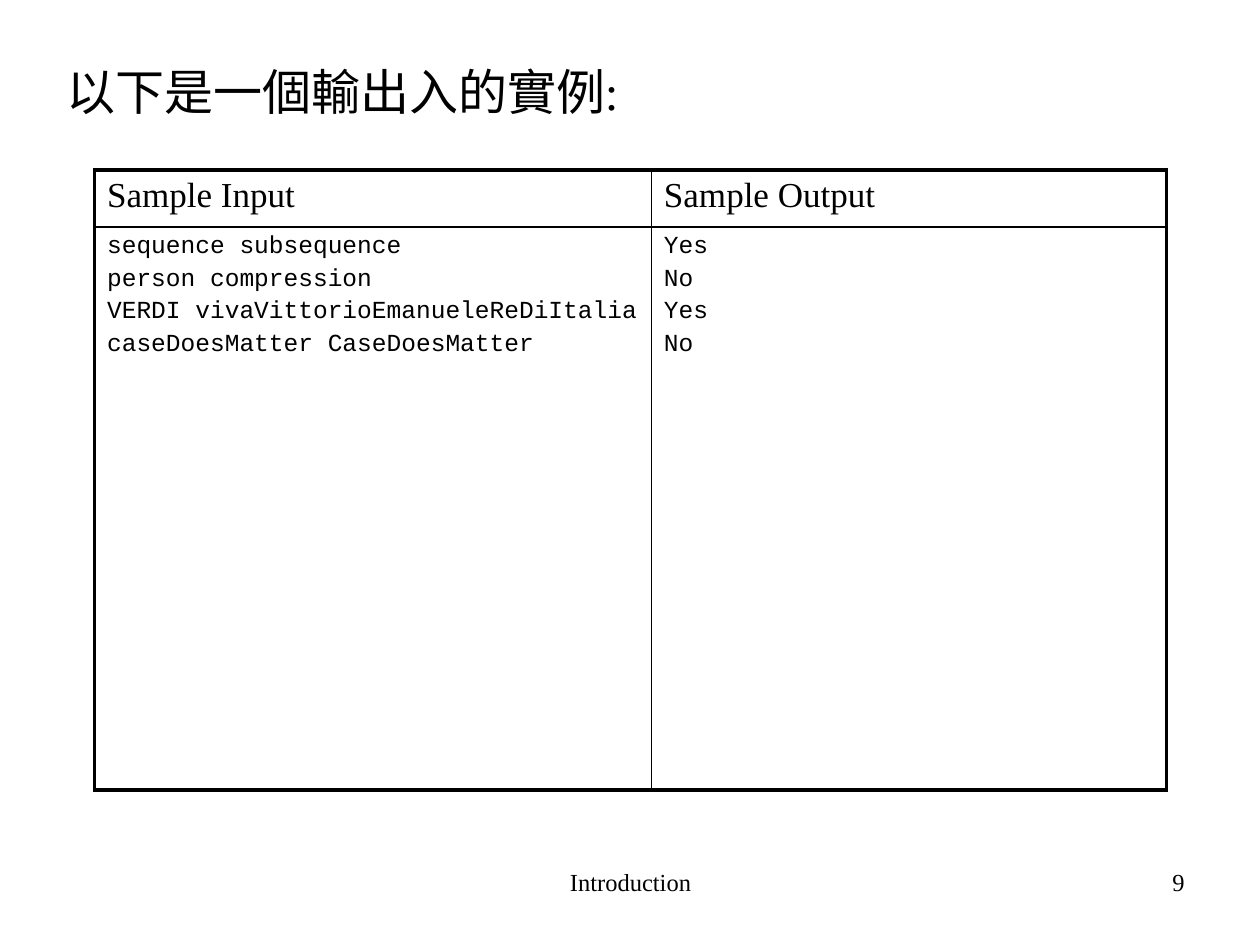
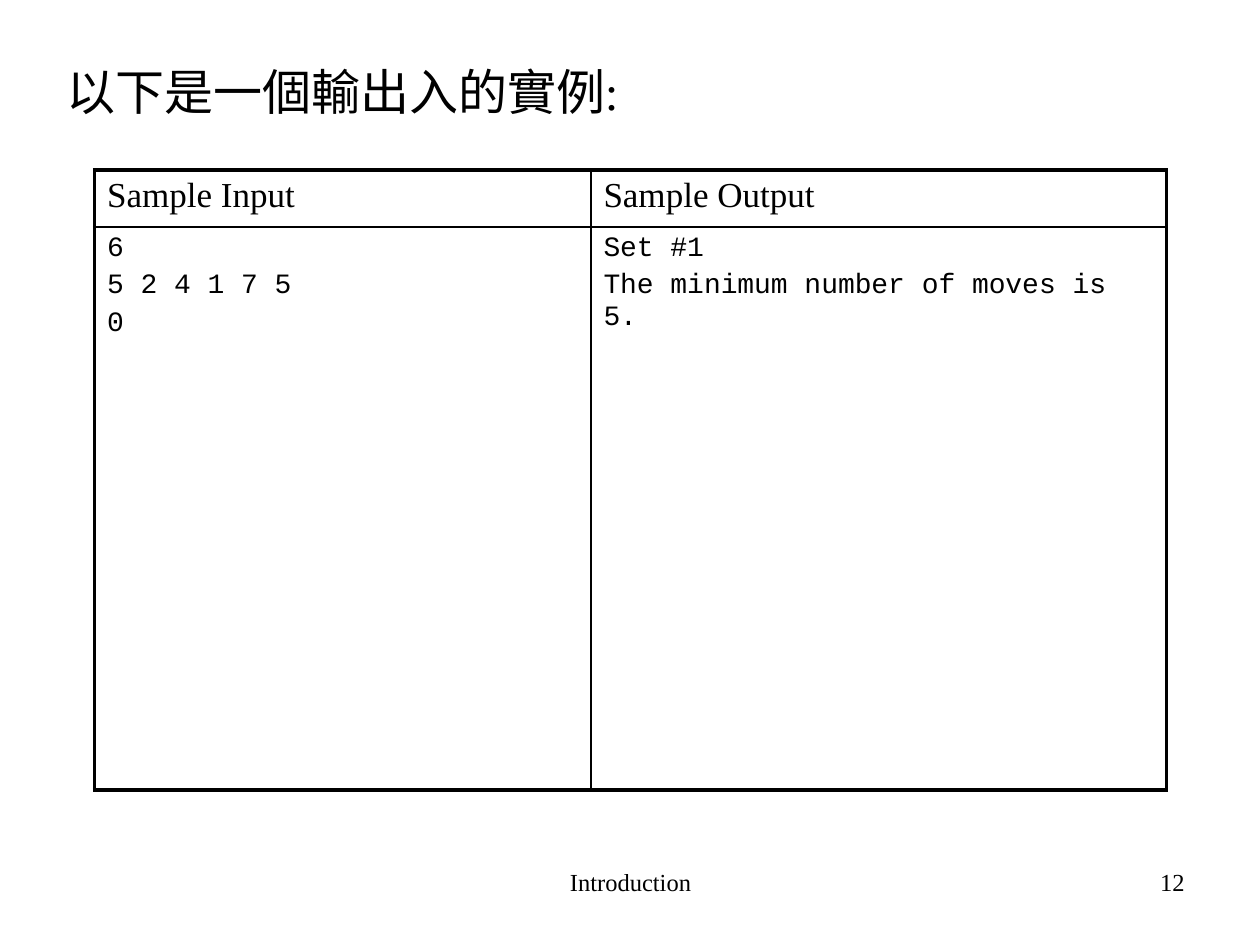
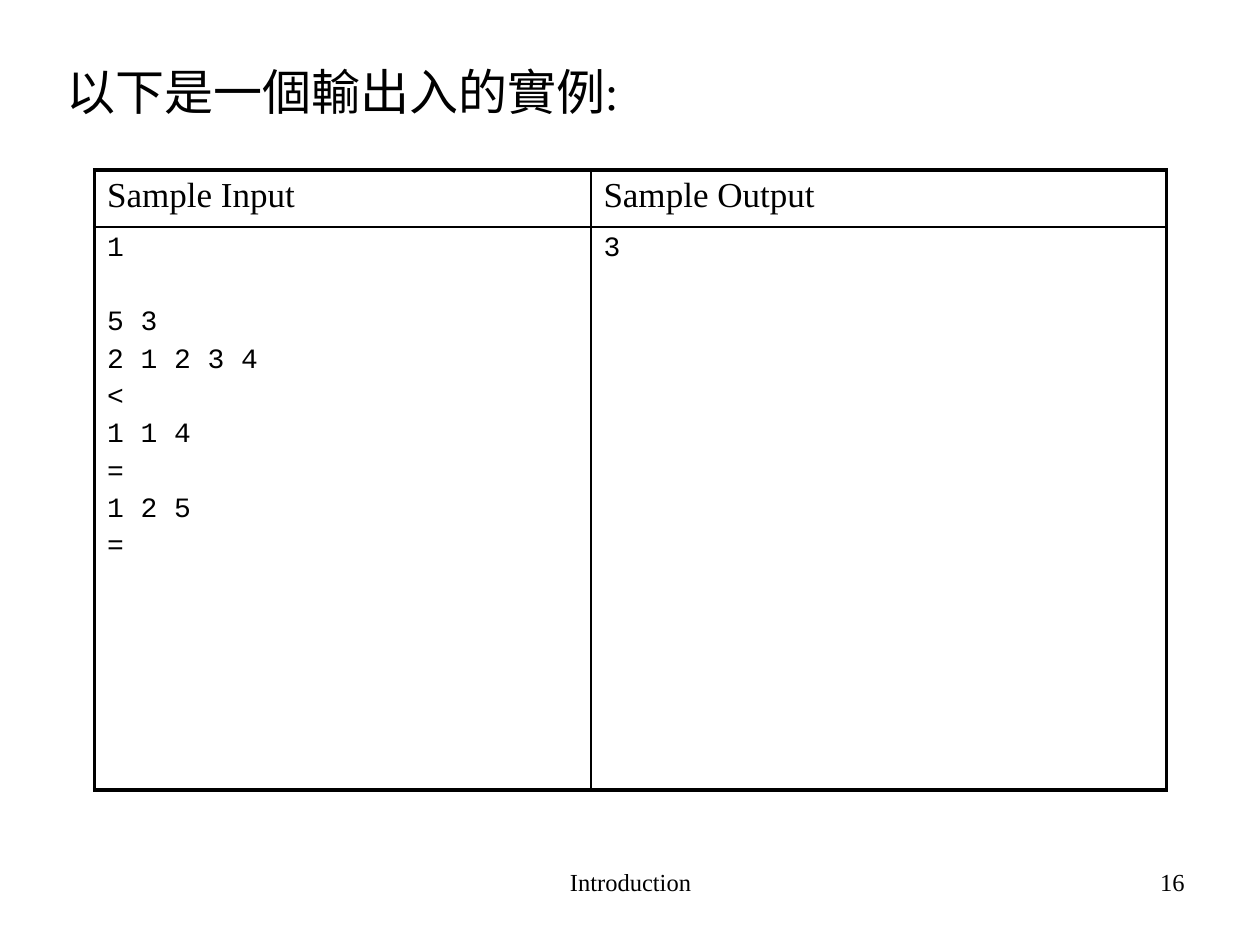
from lxml import etree
from pptx import Presentation
from pptx.dml.color import RGBColor
from pptx.enum.text import MSO_ANCHOR, MSO_AUTO_SIZE, PP_ALIGN
from pptx.oxml.ns import qn
from pptx.util import Inches, Pt

LEFT, CENTER, RIGHT = PP_ALIGN.LEFT, PP_ALIGN.CENTER, PP_ALIGN.RIGHT
TOP = MSO_ANCHOR.TOP
NO_FIT = MSO_AUTO_SIZE.NONE

INK = "000000"
SERIF, MONO = "Times New Roman", "Courier New"
TITLE = "以下是一個輸出入的實例:"
FOOTER = "Introduction"
HEADS = ("Sample Input", "Sample Output")
TABLE_W = 8.51
ROWS = (0.45, 4.47)
THICK, THIN = 2.25, 1
SPACE = 0.2  # space before a paragraph, as a share of its font size
LINE = 1.13  # line height of the code font, as a share of its size

# page number, input column width, code size, input lines, output lines;
# an empty line widens the gap above the line after it
SAMPLES = [
    (9, 4.42, 14,
     ["sequence subsequence", "person compression",
      "VERDI vivaVittorioEmanueleReDiItalia",
      "caseDoesMatter CaseDoesMatter"],
     ["Yes", "No", "Yes", "No"]),
    (12, 3.94, 16,
     ["6", "5 2 4 1 7 5", "0"],
     ["Set #1", "The minimum number of moves is 5."]),
    (16, 3.94, 16,
     ["1", "", "5 3", "2 1 2 3 4", "<", "1 1 4", "=", "1 2 5", "="],
     ["3"]),
]


def paint(target, color):
    target.rgb = RGBColor.from_string(color)


def style(par, size, face=SERIF, align=LEFT, before=0):
    par.alignment = align
    par.space_before = Pt(before)
    par.font.size = Pt(size)
    par.font.name = face
    paint(par.font.color, INK)


def add_title(slide):
    title = slide.shapes.title
    title.left, title.top = Inches(0.43), Inches(0.44)
    title.width, title.height = Inches(9), Inches(4.95)
    frame = title.text_frame
    frame.text = TITLE
    frame.vertical_anchor = TOP
    frame.auto_size = NO_FIT
    style(frame.paragraphs[0], 28, before=28 * SPACE)


def add_note(slide, text, left, width, align):
    """Add one text of the footer line."""
    box = slide.shapes.add_textbox(
        Inches(left), Inches(6.83), Inches(width), Inches(0.52))
    frame = box.text_frame
    frame.word_wrap = True
    frame.text = text
    style(frame.paragraphs[0], 14, align=align)


def add_edge(cell, side, width):
    line = etree.SubElement(
        cell._tc.get_or_add_tcPr(), qn(f"a:ln{side}"), w=str(Pt(width)))
    fill = etree.SubElement(line, qn("a:solidFill"))
    etree.SubElement(fill, qn("a:srgbClr"), val=INK)


def fill_cell(cell, lines, size, face):
    frame = cell.text_frame
    frame.text = "\n".join(line for line in lines if line)
    pars = iter(frame.paragraphs)
    gap = size * SPACE
    for line in lines:
        if line:
            style(next(pars), size, face, before=gap)
            gap = size * SPACE
        else:
            gap += size * (LINE + SPACE)


def add_sample(slide, split, size, given, wanted):
    """Add the table of sample input and output."""
    frame = slide.shapes.add_table(
        2, 2, Inches(0.75), Inches(1.35), Inches(TABLE_W), Inches(sum(ROWS)))
    table = frame.table
    table.first_row = table.horz_banding = False
    for col, width in zip(table.columns, (split, TABLE_W - split)):
        col.width = Inches(width)
    for row, height in zip(table.rows, ROWS):
        row.height = Inches(height)

    for c, (head, lines) in enumerate(zip(HEADS, (given, wanted))):
        fill_cell(table.cell(0, c), [head], 20, SERIF)
        fill_cell(table.cell(1, c), lines, size, MONO)
        for r in range(2):
            cell = table.cell(r, c)
            outer = {"L": c == 0, "R": c == 1, "T": r == 0, "B": r == 1}
            for side, edge in outer.items():
                add_edge(cell, side, THICK if edge else THIN)
            cell.fill.background()


def main():
    deck = Presentation()
    deck.slide_width, deck.slide_height = Inches(10), Inches(7.5)
    layout = deck.slide_layouts.get_by_name("Title Only")
    for page, split, size, given, wanted in SAMPLES:
        slide = deck.slides.add_slide(layout)
        add_note(slide, FOOTER, 3.42, 3.17, CENTER)
        add_note(slide, str(page), 7.17, 2.33, RIGHT)
        add_title(slide)
        add_sample(slide, split, size, given, wanted)
    deck.save("out.pptx")


if __name__ == "__main__":
    main()
